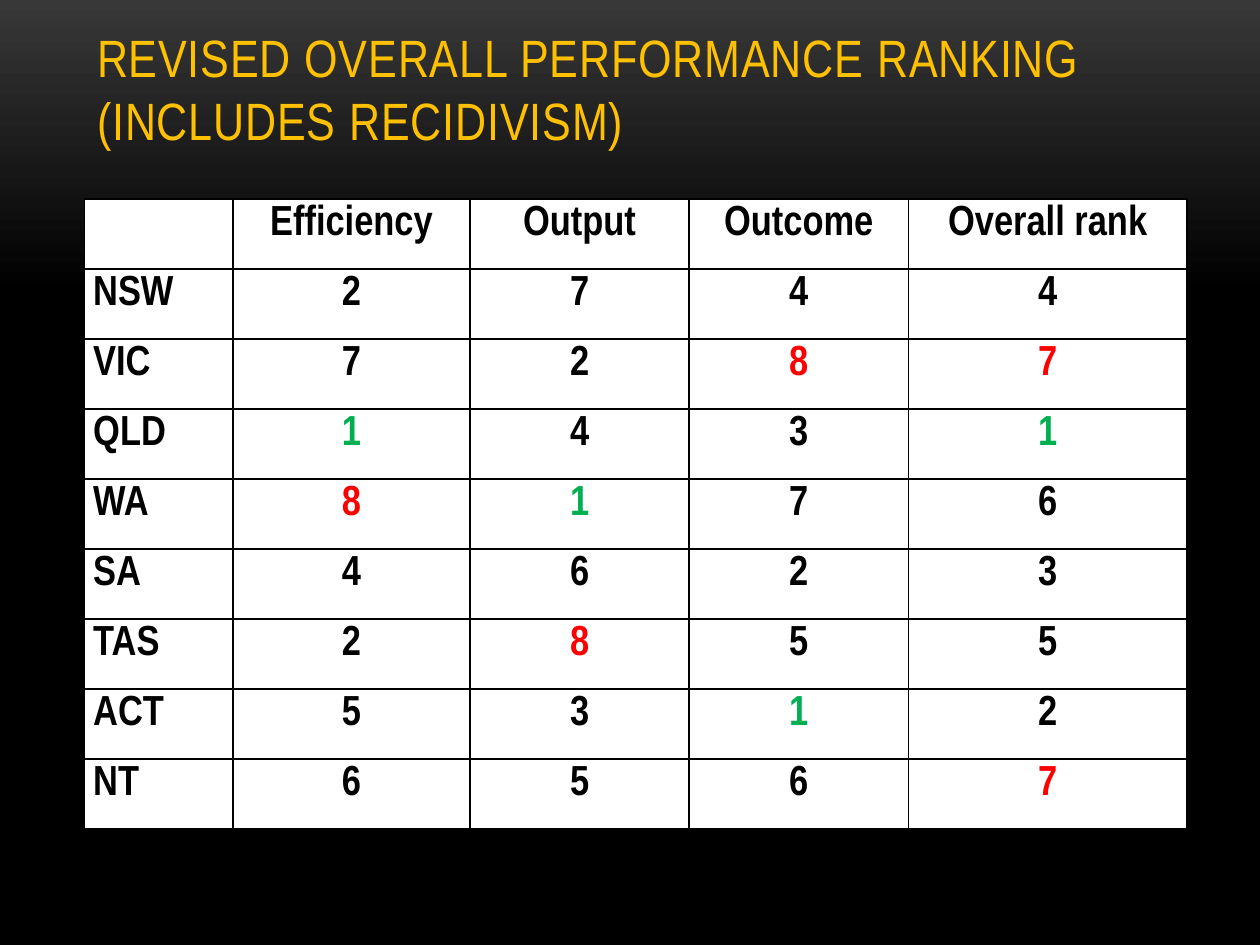
from dataclasses import dataclass

from lxml import etree
from pptx import Presentation
from pptx import util as u
from pptx.dml.color import RGBColor
from pptx.enum import text
from pptx.oxml import ns


@dataclass(frozen=True)
class Theme:
    font: str = "Arial Narrow"
    title: str = "FFC000"
    ink: str = "000000"
    paper: str = "FFFFFF"
    glow: str = "383838"
    best: str = "00B050"
    worst: str = "FF0000"
    head_pt: int = 30
    cell_pt: int = 24


THEME = Theme()
WIDE, HIGH = 10, 7.5
LEFT = 0.67
TITLE = "REVISED OVERALL PERFORMANCE RANKING (INCLUDES RECIDIVISM)"
HEADS = ["", "Efficiency", "Output", "Outcome", "Overall rank"]
COLS = [1.18, 1.88, 1.74, 1.74, 2.21]
ROW = 5 / 9
RANKS = {
    "NSW": (2, 7, 4, 4),
    "VIC": (7, 2, 8, 7),
    "QLD": (1, 4, 3, 1),
    "WA": (8, 1, 7, 6),
    "SA": (4, 6, 2, 3),
    "TAS": (2, 8, 5, 5),
    "ACT": (5, 3, 1, 2),
    "NT": (6, 5, 6, 7),
}


def color(code):
    return RGBColor.from_string(code)


def style(font, size, code, bold=False):
    font.name = THEME.font
    font.size = u.Pt(size)
    font.bold = bold
    font.color.rgb = color(code)


def paint_back(slide):
    fill = slide.background.fill
    fill.gradient()
    fill.gradient_angle = 270
    stops = zip(fill.gradient_stops, (0, 0.31), (THEME.glow, THEME.ink))
    for stop, place, code in stops:
        stop.position = place
        stop.color.rgb = color(code)


def add_title(slide):
    box = slide.shapes.title
    box.left, box.top = u.Inches(LEFT), u.Inches(0.3)
    box.width, box.height = u.Inches(8.67), u.Inches(0.95)
    frame = box.text_frame
    frame.text = TITLE
    frame.word_wrap = True
    frame.auto_size = text.MSO_AUTO_SIZE.NONE
    frame.vertical_anchor = text.MSO_ANCHOR.BOTTOM
    para = frame.paragraphs[0]
    para.alignment = text.PP_ALIGN.LEFT
    run = para.runs[0]
    style(run.font, THEME.head_pt, THEME.title)
    run.font._element.set("spc", "50")


def rule_cell(cell):
    """Draw a thin line on all four sides; must come before the fill."""
    props = cell._tc.get_or_add_tcPr()
    for side in ("lnL", "lnR", "lnT", "lnB"):
        line = etree.SubElement(props, ns.qn(f"a:{side}"), w=str(u.Pt(1)))
        fill = etree.SubElement(line, ns.qn("a:solidFill"))
        etree.SubElement(fill, ns.qn("a:srgbClr"), val=THEME.ink)


def fill_cell(cell, words, code, align):
    rule_cell(cell)
    cell.fill.solid()
    cell.fill.fore_color.rgb = color(THEME.paper)
    cell.margin_left = cell.margin_right = u.Inches(0.07)
    cell.margin_top = cell.margin_bottom = 0
    if words:
        para = cell.text_frame.paragraphs[0]
        para.text = words
        para.alignment = align
        para.line_spacing = 1.15
        style(para.runs[0].font, THEME.cell_pt, code, bold=True)


def rank_color(rank, ranks):
    """Mark the best and the worst rank of a column."""
    return {min(ranks): THEME.best, max(ranks): THEME.worst}.get(rank, THEME.ink)


def add_ranks(slide):
    rows = [HEADS] + [[state, *ranks] for state, ranks in RANKS.items()]
    frame = slide.shapes.add_table(
        len(rows), len(COLS), u.Inches(LEFT), u.Inches(1.58),
        u.Inches(sum(COLS)), u.Inches(ROW * len(rows)))
    table = frame.table
    table.first_row = table.horz_banding = False
    for row in table.rows:
        row.height = u.Inches(ROW)
    for c, (width, column) in enumerate(zip(COLS, zip(*rows))):
        table.columns[c].width = u.Inches(width)
        align = text.PP_ALIGN.CENTER if c else text.PP_ALIGN.LEFT
        for r, value in enumerate(column):
            code = rank_color(value, column[1:]) if r and c else THEME.ink
            fill_cell(table.cell(r, c), str(value), code, align)


def main():
    deck = Presentation()
    deck.slide_width, deck.slide_height = u.Inches(WIDE), u.Inches(HIGH)
    slide = deck.slides.add_slide(deck.slide_layouts[5])
    paint_back(slide)
    add_title(slide)
    add_ranks(slide)
    deck.save("out.pptx")


if __name__ == "__main__":
    main()
